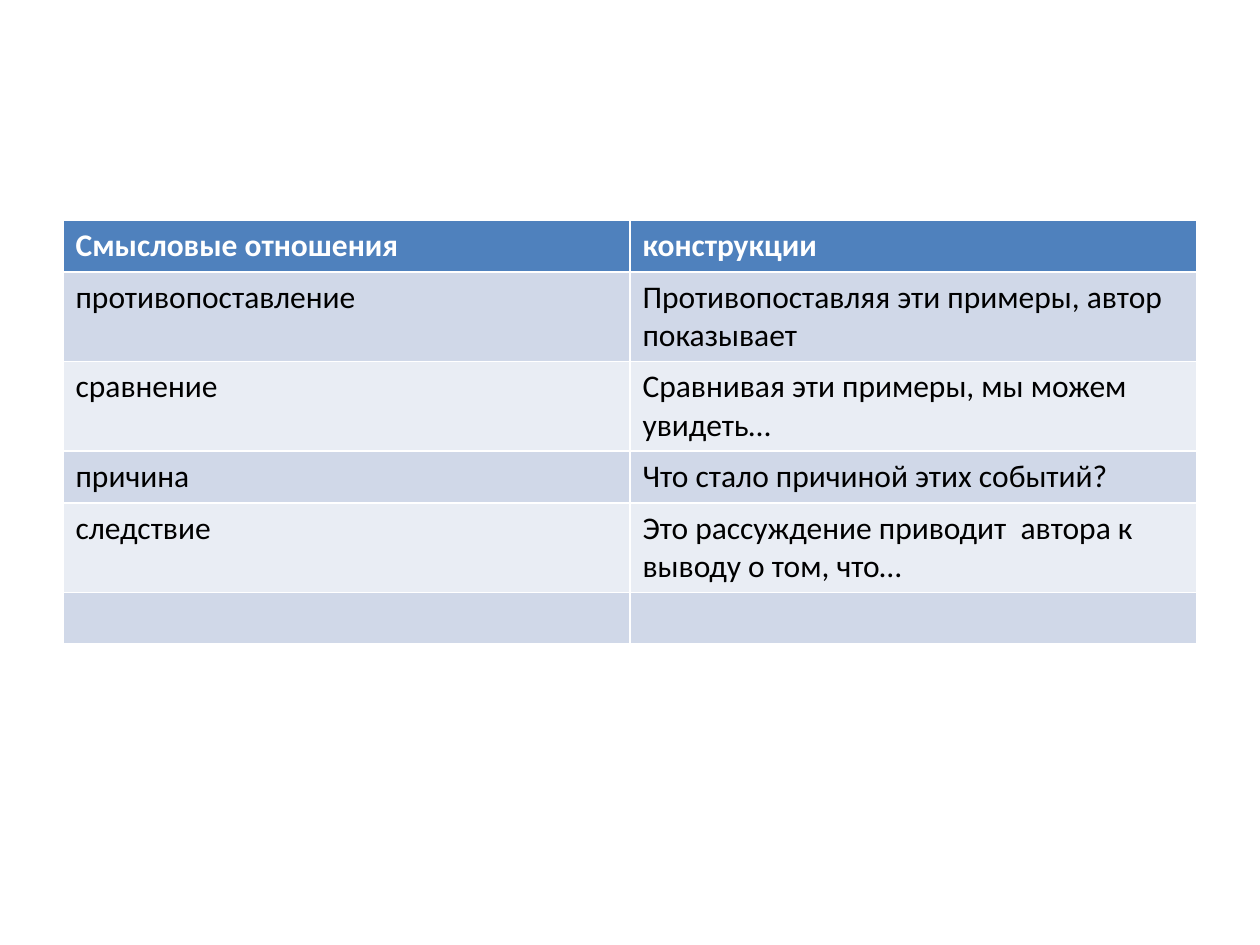
from typing import NamedTuple

from pptx import Presentation
from pptx.dml.color import RGBColor
from pptx.util import Inches, Pt

HEADER_FILL = "4F81BD"
BAND_FILLS = ("D0D8E8", "E9EDF4")


class Entry(NamedTuple):
    relation: str
    phrase: str


HEADER = Entry("Смысловые отношения", "конструкции")
ENTRIES = [
    Entry("противопоставление", "Противопоставляя эти примеры, автор показывает"),
    Entry("сравнение", "Сравнивая эти примеры, мы можем увидеть…"),
    Entry("причина", "Что стало причиной этих событий?"),
    Entry("следствие", "Это рассуждение приводит  автора к выводу о том, что…"),
    Entry("", ""),
]


def color(value: str) -> RGBColor:
    return RGBColor.from_string(value)


def fill_row(table, index: int, entry: Entry, fill: str, ink: str, bold: bool) -> None:
    table.rows[index].height = Inches(0.41)
    for column, text in enumerate(entry):
        cell = table.cell(index, column)
        cell.fill.solid()
        cell.fill.fore_color.rgb = color(fill)
        cell.text = text
        font = cell.text_frame.paragraphs[0].font
        font.name, font.size, font.bold = "Calibri", Pt(18), bold
        font.color.rgb = color(ink)


def main() -> None:
    deck = Presentation()
    deck.slide_width, deck.slide_height = Inches(10), Inches(7.5)
    page = deck.slides.add_slide(deck.slide_layouts[6])

    # The default table style draws the white rules between the cells
    frame = page.shapes.add_table(
        len(ENTRIES) + 1, len(HEADER), Inches(0.5), Inches(1.75), Inches(9), Inches(3.32)
    )
    table = frame.table

    # Header, then banded rows that grow with their text
    fill_row(table, 0, HEADER, HEADER_FILL, "FFFFFF", True)
    for index, entry in enumerate(ENTRIES):
        fill_row(table, index + 1, entry, BAND_FILLS[index % 2], "000000", False)
    frame.height = Inches(3.32)

    deck.save("out.pptx")


if __name__ == "__main__":
    main()
